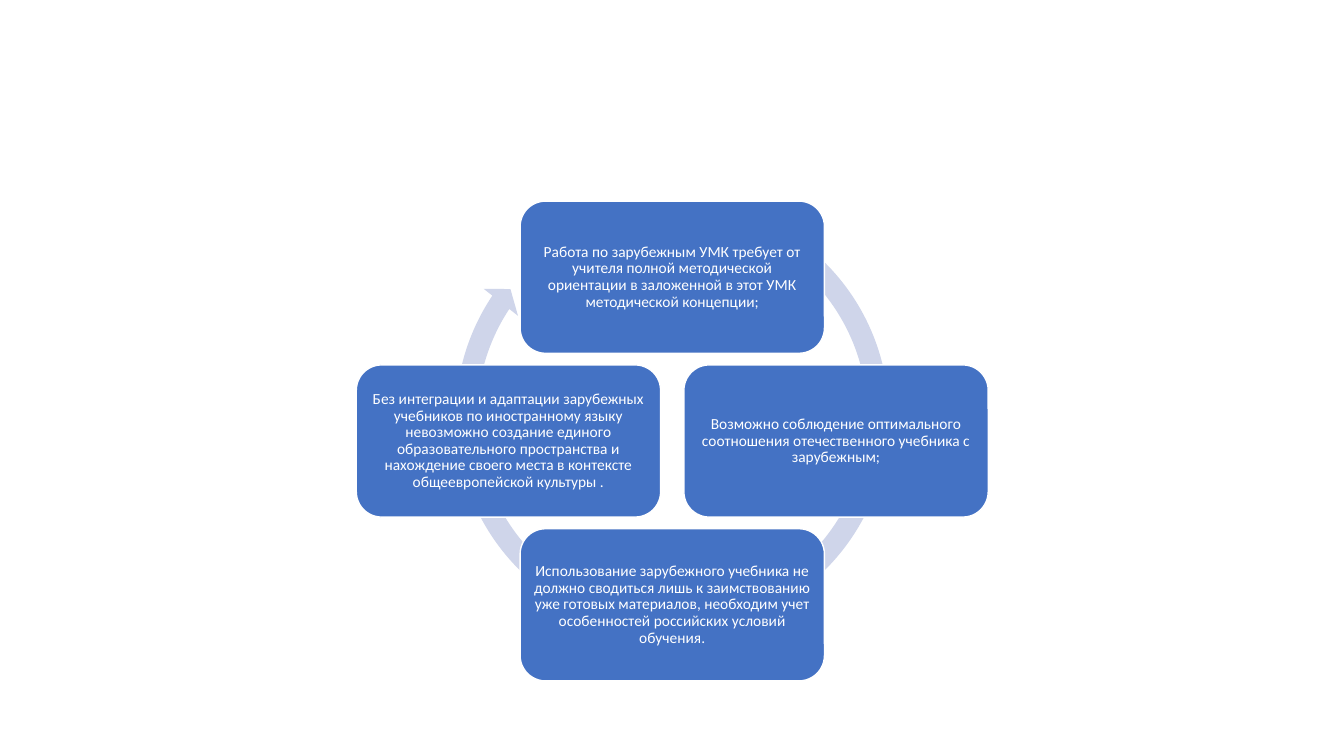
from math import cos, pi, sin

from pptx import Presentation
from pptx.dml.color import RGBColor
from pptx.enum.shapes import MSO_SHAPE
from pptx.enum.text import MSO_ANCHOR, PP_ALIGN
from pptx.util import Pt

CENTER_X, CENTER_Y = 480.2, 315
ORBIT = 117
BOX_WIDTH, BOX_HEIGHT = 217.4, 108.7
RING_SIZE, RING_TOP = 325.4, 134.7
RING_ADJUSTMENTS = (0.047, 2.73, 128.18, 180.4, 0.048)

# Clockwise from the top
THESES = (
    "Работа по зарубежным УМК требует от учителя полной методической "
    "ориентации в заложенной в этот УМК методической концепции;",
    "Возможно соблюдение оптимального соотношения отечественного учебника "
    "с зарубежным;",
    "Использование зарубежного учебника не должно сводиться лишь к "
    "заимствованию уже готовых материалов, необходим учет особенностей "
    "российских условий обучения.",
    "Без интеграции и адаптации зарубежных учебников по иностранному языку "
    "невозможно создание единого образовательного пространства и нахождение "
    "своего места в контексте общеевропейской культуры .",
)


def color(hex_code):
    return RGBColor.from_string(hex_code)


def write(frame, text, *, size, font, fill, inset, spacing=0.9):
    """Fill a text frame with one centred paragraph."""
    frame.word_wrap = True
    frame.vertical_anchor = MSO_ANCHOR.MIDDLE
    frame.margin_left = frame.margin_right = Pt(inset)
    frame.margin_top = frame.margin_bottom = Pt(inset)
    paragraph = frame.paragraphs[0]
    paragraph.alignment = PP_ALIGN.CENTER
    paragraph.line_spacing = spacing
    run = paragraph.add_run()
    run.text = text
    run.font.size = Pt(size)
    run.font.name = font
    run.font.color.rgb = color(fill)


class CycleSlide:
    font, text_size, inset = "Calibri", 11, 3.3
    box_fill, ring_fill, light = "4472C4", "CFD5EA", "FFFFFF"

    def __init__(self, slide):
        self.slide = slide

    def shape(self, kind, left, top, width, height, fill):
        shape = self.slide.shapes.add_shape(
            kind, Pt(left), Pt(top), Pt(width), Pt(height))
        shape.shadow.inherit = False
        shape.fill.solid()
        shape.fill.fore_color.rgb = color(fill)
        return shape

    def ring(self, left, top, size, adjustments):
        ring = self.shape(MSO_SHAPE.CIRCULAR_ARROW, left, top, size, size,
                          self.ring_fill)
        ring.line.fill.background()
        for index, value in enumerate(adjustments):
            ring.adjustments[index] = value

    def box(self, center_x, center_y, text):
        box = self.shape(MSO_SHAPE.ROUNDED_RECTANGLE,
                         center_x - BOX_WIDTH / 2, center_y - BOX_HEIGHT / 2,
                         BOX_WIDTH, BOX_HEIGHT, self.box_fill)
        box.line.color.rgb = color(self.light)
        box.line.width = Pt(1)
        write(box.text_frame, text, size=self.text_size, font=self.font,
              fill=self.light, inset=self.inset)


def main():
    presentation = Presentation()
    presentation.slide_width, presentation.slide_height = Pt(960), Pt(540)
    cycle = CycleSlide(
        presentation.slides.add_slide(presentation.slide_layouts[6]))
    cycle.ring(CENTER_X - RING_SIZE / 2, RING_TOP, RING_SIZE, RING_ADJUSTMENTS)
    for index, thesis in enumerate(THESES):
        angle = 2 * pi * index / len(THESES)
        cycle.box(CENTER_X + ORBIT * sin(angle),
                  CENTER_Y - ORBIT * cos(angle), thesis)
    presentation.save("out.pptx")


if __name__ == "__main__":
    main()
